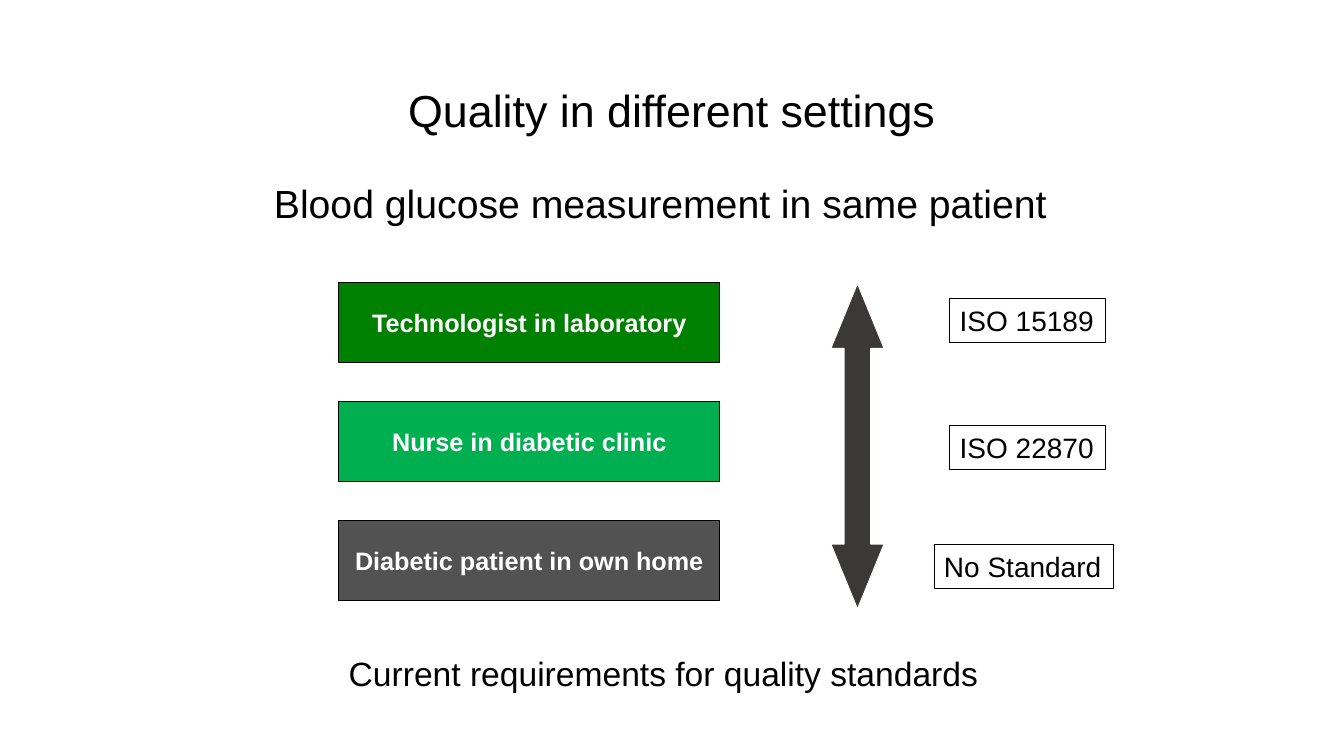
from pptx import Presentation
from pptx.dml.color import RGBColor
from pptx.enum.shapes import MSO_SHAPE
from pptx.enum.text import MSO_ANCHOR, PP_ALIGN
from pptx.util import Pt

COLORS = {
    "black": "000000",
    "white": "FFFFFF",
    "lab": "008000",
    "clinic": "00B050",
    "home": "525252",
    "arrow": "3B3838",
}
FONT = "Arial"


def tint(name):
    return RGBColor.from_string(COLORS[name])


def write(frame, text, size=20, color="black", bold=False, align=PP_ALIGN.LEFT,
          anchor=MSO_ANCHOR.TOP, wrap=False, spacing=None, inset=7.2):
    frame.word_wrap = wrap
    frame.vertical_anchor = anchor
    frame.margin_left = Pt(inset)
    para = frame.paragraphs[0]
    para.alignment = align
    para.line_spacing = spacing
    run = para.add_run()
    run.text = text
    run.font.name = FONT
    run.font.size = Pt(size)
    run.font.bold = bold
    run.font.color.rgb = tint(color)


class Board:
    def __init__(self, deck):
        self.slide = deck.slides.add_slide(deck.slide_layouts[5])
        self.shapes = self.slide.shapes
        fill = self.slide.background.fill
        fill.solid()
        fill.fore_color.rgb = tint("white")

    def title(self, text, left, top, width, height):
        head = self.shapes.title
        head.left, head.top = Pt(left), Pt(top)
        head.width, head.height = Pt(width), Pt(height)
        write(head.text_frame, text, size=32, align=PP_ALIGN.CENTER,
              anchor=MSO_ANCHOR.MIDDLE, wrap=True, spacing=0.9)

    def text(self, text, left, top, width, height, **style):
        box = self.shapes.add_textbox(Pt(left), Pt(top), Pt(width), Pt(height))
        write(box.text_frame, text, **style)

    def shape(self, kind, left, top, width, height, fill=None, line="black"):
        item = self.shapes.add_shape(kind, Pt(left), Pt(top), Pt(width), Pt(height))
        item.shadow.inherit = False
        if fill:
            item.fill.solid()
            item.fill.fore_color.rgb = tint(fill)
        else:
            item.fill.background()
        item.line.color.rgb = tint(line)
        item.line.width = Pt(0.75)
        return item

    def box(self, text, left, top, width, height, fill=None, **style):
        item = self.shape(MSO_SHAPE.RECTANGLE, left, top, width, height, fill)
        write(item.text_frame, text, **style)

    def arrow(self, left, top, width, height):
        """Draw a double arrow, giving each guide its own name."""
        item = self.shape(MSO_SHAPE.UP_DOWN_ARROW, left, top, width, height,
                          "arrow", "white")
        item.adjustments[0] = 0.5
        item.adjustments[1] = 1.22
        for number, guide in enumerate(item.element.xpath(".//a:gd"), 1):
            guide.set("name", f"adj{number}")


def main():
    deck = Presentation()
    deck.slide_width, deck.slide_height = Pt(960), Pt(540)
    board = Board(deck)

    board.title("Quality in different settings", 66, 28.75, 828, 104.4)
    board.text("Blood glucose measurement in same patient", 157, 128.2, 648, 356.4,
               size=28, wrap=True, spacing=0.9, inset=38.7)

    settings = [
        ("Technologist in laboratory", "lab"),
        ("Nurse in diabetic clinic", "clinic"),
        ("Diabetic patient in own home", "home"),
    ]
    for row, (text, fill) in enumerate(settings):
        board.box(text, 242, 202 + 85 * row, 272.2, 56.9, fill, size=18,
                  color="white", bold=True, align=PP_ALIGN.CENTER,
                  anchor=MSO_ANCHOR.MIDDLE)

    board.text("Current requirements for quality standards", 242, 463, 468.7, 36.7,
               size=24)
    board.arrow(593.5, 202.5, 38, 232.5)

    standards = [
        ("ISO 15189", 678.4, 213, 111.2),
        ("ISO 22870", 678.4, 303.8, 111.2),
        ("No Standard", 667.2, 388.8, 128),
    ]
    for text, left, top, width in standards:
        board.box(text, left, top, width, 31.7)

    deck.save("out.pptx")


if __name__ == "__main__":
    main()
